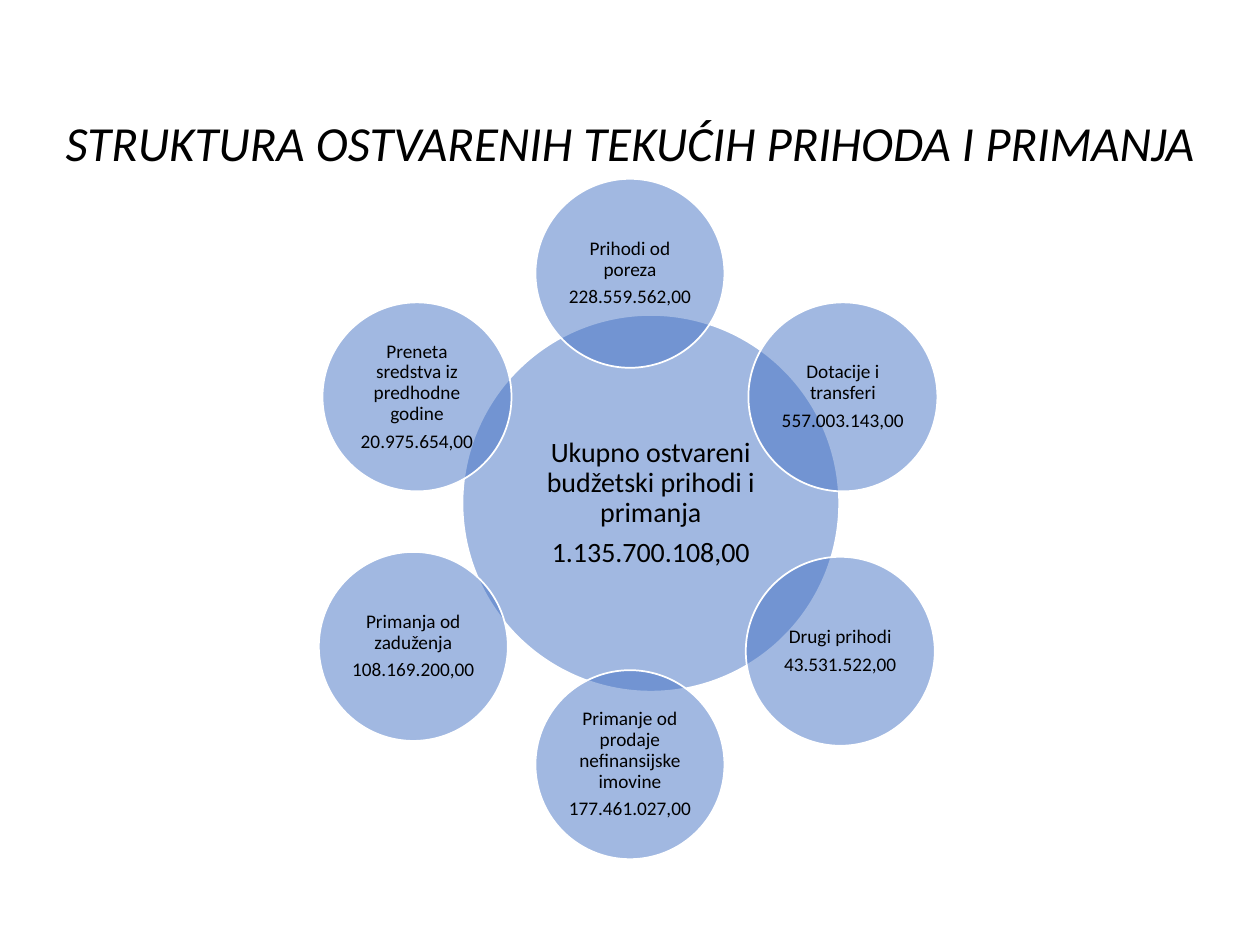
import pptx
import pptx.util
import pptx.dml.color
import pptx.enum.shapes
import pptx.enum.text
from lxml import etree

Pt = pptx.util.Pt
TITLE = "STRUKTURA OSTVARENIH TEKUĆIH PRIHODA I PRIMANJA"
BLUE, WHITE, BLACK = "4472C4", "FFFFFF", "000000"
BIG, SMALL = (215.3, 16), (108, 11)  # diameter, text size

# Label, amount, centre x, centre y, kind of circle
CIRCLES = [
    ("Ukupno ostvareni budžetski prihodi i primanja", "1.135.700.108,00", 371.9, 287.6, BIG),
    ("Prihodi od poreza", "228.559.562,00", 360, 156.2, SMALL),
    ("Dotacije i transferi", "557.003.143,00", 481.7, 226.8, SMALL),
    ("Drugi prihodi", "43.531.522,00", 480.2, 372.2, SMALL),
    ("Primanje od prodaje nefinansijske imovine", "177.461.027,00", 360, 437, SMALL),
    ("Primanja od zaduženja", "108.169.200,00", 236.2, 369.4, SMALL),
    ("Preneta sredstva iz predhodne godine", "20.975.654,00", 238.3, 226.8, SMALL),
]


def paint(color, code):
    color.rgb = pptx.dml.color.RGBColor.from_string(code)


def style(par, size, italic=False):
    par.alignment = pptx.enum.text.PP_ALIGN.CENTER
    par.line_spacing = 0.9
    par.font.name = "Calibri"
    par.font.size = Pt(size)
    par.font.italic = italic
    paint(par.font.color, BLACK)


def add_circle(slide, label, amount, x, y, kind):
    width, size = kind
    shape = slide.shapes.add_shape(
        pptx.enum.shapes.MSO_SHAPE.OVAL,
        Pt(x - width / 2), Pt(y - width / 2), Pt(width), Pt(width))
    shape.shadow.inherit = False
    shape.fill.solid()
    paint(shape.fill.fore_color, BLUE)
    paint(shape.line.color, WHITE)
    shape.line.width = Pt(1)

    # Half transparent fill
    tone = shape.fill._xPr.find(".//" + pptx.oxml.ns.qn("a:srgbClr"))
    etree.SubElement(tone, pptx.oxml.ns.qn("a:alpha"), val="50000")

    # Label over amount
    frame = shape.text_frame
    frame.word_wrap = True
    frame.vertical_anchor = pptx.enum.text.MSO_ANCHOR.MIDDLE
    frame.margin_left = frame.margin_right = Pt(1.4)
    frame.margin_top = frame.margin_bottom = Pt(1.4)
    frame.text = f"{label}\n{amount}"
    for par in frame.paragraphs:
        style(par, size)
        par.space_after = Pt(round(size * 0.35, 2))


deck = pptx.Presentation()
deck.slide_width, deck.slide_height = Pt(720), Pt(540)
slide = deck.slides.add_slide(deck.slide_layouts[5])

# Title
title = slide.shapes.title
title.left, title.top, title.width, title.height = Pt(21.6), Pt(18), Pt(676.8), Pt(84.2)
title.text_frame.text = TITLE
title.text_frame.auto_size = pptx.enum.text.MSO_AUTO_SIZE.NONE
title.text_frame.vertical_anchor = pptx.enum.text.MSO_ANCHOR.BOTTOM
style(title.text_frame.paragraphs[0], 28, italic=True)

# Total in the middle, its parts around it
for circle in CIRCLES:
    add_circle(slide, *circle)

deck.save("out.pptx")
